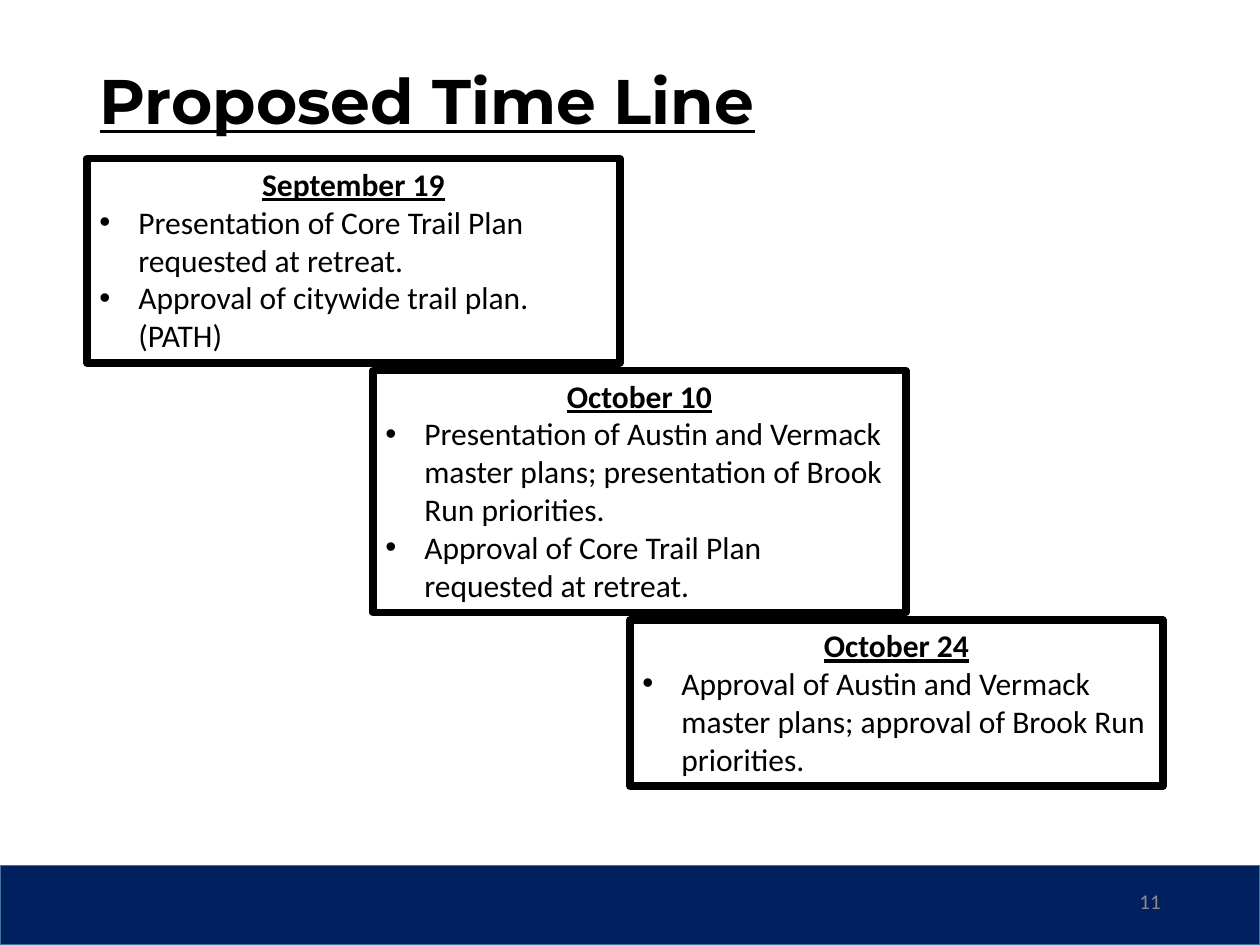
from dataclasses import dataclass

from lxml.etree import SubElement
from pptx import Presentation
from pptx.dml.color import RGBColor as Rgb
from pptx.enum.shapes import MSO_SHAPE as Shape
from pptx.enum.text import MSO_ANCHOR as Anchor, MSO_AUTO_SIZE as AutoSize, PP_ALIGN as Align
from pptx.oxml.ns import qn
from pptx.util import Inches, Pt


@dataclass(frozen=True)
class Theme:
    ink: Rgb = Rgb(0, 0, 0)
    band: Rgb = Rgb(0x00, 0x20, 0x60)
    band_edge: Rgb = Rgb(0x43, 0x73, 0x9E)
    muted: Rgb = Rgb(0x8C, 0x8C, 0x8C)
    heading_font: str = "Montserrat"
    body_font: str = "Calibri"
    title_size: int = 36
    body_size: int = 18
    number_size: int = 12
    border: float = 4.25


THEME = Theme()
WIDTH, HEIGHT = 10, 7.5
MARGIN = 0.69
CONTENT_TOP = 1.26
CARD_WIDTH = 4.23
CARD_GAP = 0.06
LINE_HEIGHT, CARD_PADDING = 0.3, 0.12
INDENT = 0.31

# Left edge, date, number of text lines, agenda items
MEETINGS = [
    (MARGIN, "September 19", 5, [
        "Presentation of Core Trail Plan requested at retreat.",
        "Approval of citywide trail plan. (PATH)",
    ]),
    (2.96, "October 10", 6, [
        "Presentation of Austin and Vermack master plans; "
        "presentation of Brook Run priorities.",
        "Approval of Core Trail Plan requested at retreat.",
    ]),
    (5, "October 24", 4, [
        "Approval of Austin and Vermack master plans; "
        "approval of Brook Run priorities.",
    ]),
]


def to_emu(box):
    return [Inches(length) for length in box]


def add_run(paragraph, text, font_name, size, color, heading=False):
    run = paragraph.add_run()
    run.text = text
    run.font.name = font_name
    run.font.size = Pt(size)
    run.font.color.rgb = color
    run.font.bold = run.font.underline = heading


def add_bullet(paragraph):
    properties = paragraph._p.get_or_add_pPr()
    properties.set("marL", str(Inches(INDENT)))
    properties.set("indent", str(-Inches(INDENT)))
    SubElement(properties, qn("a:buFont")).set("typeface", "Arial")
    SubElement(properties, qn("a:buChar")).set("char", "•")


def place_title(slide, box):
    title = slide.shapes.title
    title.left, title.top, title.width, title.height = to_emu(box)
    frame = title.text_frame
    frame.word_wrap = True
    frame.vertical_anchor = Anchor.MIDDLE
    heading = frame.paragraphs[0]
    heading.alignment = Align.LEFT
    heading.line_spacing = 0.9
    add_run(heading, "Proposed Time Line", THEME.heading_font,
            THEME.title_size, THEME.ink, heading=True)


def add_footer(slide, box):
    left, top, width, height = box
    band = slide.shapes.add_shape(Shape.RECTANGLE, *to_emu(box))
    band.shadow.inherit = False
    band.fill.solid()
    band.fill.fore_color.rgb = THEME.band
    band.line.color.rgb = THEME.band_edge
    band.line.width = Pt(1)

    number_width, number_height = 2.25, 0.4
    number_box = (left + width - MARGIN - number_width, top + 0.08,
                  number_width, number_height)
    frame = slide.shapes.add_textbox(*to_emu(number_box)).text_frame
    frame.word_wrap = True
    frame.vertical_anchor = Anchor.MIDDLE
    page_number = frame.paragraphs[0]
    page_number.alignment = Align.RIGHT
    add_run(page_number, "11", THEME.body_font, THEME.number_size, THEME.muted)


def add_meeting(slide, box, date, items):
    card = slide.shapes.add_shape(Shape.RECTANGLE, *to_emu(box))
    card.shadow.inherit = False
    card.fill.background()
    card.line.color.rgb = THEME.ink
    card.line.width = Pt(THEME.border)
    frame = card.text_frame
    frame.word_wrap = True
    frame.auto_size = AutoSize.SHAPE_TO_FIT_TEXT
    frame.vertical_anchor = Anchor.TOP

    heading = frame.paragraphs[0]
    heading.alignment = Align.CENTER
    add_run(heading, date, THEME.body_font, THEME.body_size, THEME.ink, heading=True)
    for item in items:
        paragraph = frame.add_paragraph()
        paragraph.alignment = Align.LEFT
        add_bullet(paragraph)
        add_run(paragraph, item, THEME.body_font, THEME.body_size, THEME.ink)


def add_timeline(slide, top):
    """Stack the meetings as steps, each starting below the one before."""
    for left, date, lines, items in MEETINGS:
        height = lines * LINE_HEIGHT + CARD_PADDING
        add_meeting(slide, (left, top, CARD_WIDTH, height), date, items)
        top += height + CARD_GAP


def main():
    deck = Presentation()
    deck.slide_width, deck.slide_height = Inches(WIDTH), Inches(HEIGHT)
    slide = deck.slides.add_slide(deck.slide_layouts[5])
    footer_height = 0.63
    add_footer(slide, (0, HEIGHT - footer_height, WIDTH, footer_height))
    place_title(slide, (MARGIN, 0.4, WIDTH - 2 * MARGIN, CONTENT_TOP - 0.4))
    add_timeline(slide, CONTENT_TOP)
    deck.save("out.pptx")


if __name__ == "__main__":
    main()
